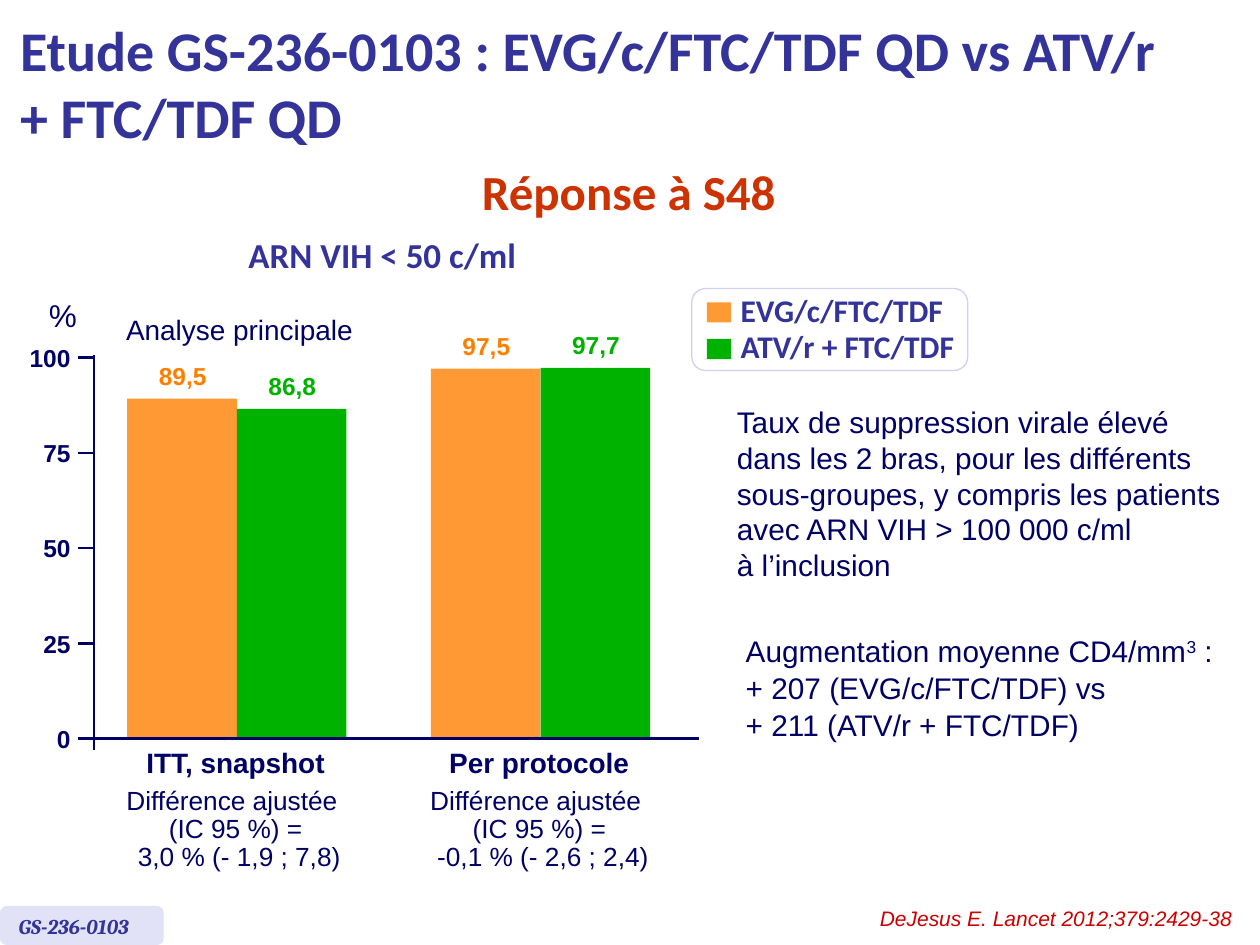
from dataclasses import dataclass

from lxml import etree
from pptx import Presentation
from pptx import util as u
from pptx.dml.color import RGBColor
from pptx.enum import shapes, text
from pptx.oxml.ns import qn

CELL = u.Inches(0.1)  # the slide is a grid of 100 columns by 75 rows
BASE = 58.6           # row of the horizontal axis
TICK_STEP = 0.302     # rows per percent on the axis
BAR_STEP = 0.3        # rows per percent in the bars
BAR_WIDTH = 8.7
LEFT, CENTER, RIGHT = text.PP_ALIGN.LEFT, text.PP_ALIGN.CENTER, text.PP_ALIGN.RIGHT
TOP, MIDDLE = text.MSO_ANCHOR.TOP, text.MSO_ANCHOR.MIDDLE
RECT, ROUND = shapes.MSO_SHAPE.RECTANGLE, shapes.MSO_SHAPE.ROUNDED_RECTANGLE


def style(name: str, size: int, color: str, **more) -> dict:
    return dict(name=name, size=u.Pt(size), color=color, **more)


@dataclass(frozen=True)
class Theme:
    navy: str = "000066"
    indigo: str = "333399"
    orange: str = "FF9933"
    orange_text: str = "FE7F00"
    green: str = "00B200"
    red: str = "CC0000"
    rust: str = "CC3300"
    tag_fill: str = "E2E2F6"
    legend_line: str = "D0D0F0"
    white: str = "FFFFFF"

    def arial(self, size: int, **more) -> dict:
        return style("Arial", size, self.navy, **more)

    def calibri(self, size: int, color: str = indigo) -> dict:
        return style("Calibri", size, color, bold=True)

    def value(self, color: str) -> dict:
        return style("Arial", 14, color, bold=True)


T = Theme()


@dataclass(frozen=True)
class Box:
    left: float
    top: float
    width: float
    height: float

    def emu(self) -> list[int]:
        return [round(v * CELL) for v in (self.left, self.top, self.width, self.height)]


@dataclass(frozen=True)
class Arm:
    name: str
    fill: str
    label: str


@dataclass(frozen=True)
class Analysis:
    name: str
    left: float
    values: tuple[float, float]
    difference: str


ARMS = (Arm("EVG/c/FTC/TDF", T.orange, T.orange_text),
        Arm("ATV/r + FTC/TDF", T.green, T.green))
ANALYSES = (Analysis("ITT, snapshot", 10.1, (89.5, 86.8), " 3,0 % (- 1,9 ; 7,8)"),
            Analysis("Per protocole", 34.2, (97.5, 97.7), " -0,1 % (- 2,6 ; 2,4)"))


def format_font(font, fmt: dict) -> None:
    for key, val in fmt.items():
        if key == "color":
            font.color.rgb = RGBColor.from_string(val)
        else:
            setattr(font, key, val)


def write(tf, lines: list[str], fmt: dict, align=LEFT, spacing=None, before=None) -> None:
    """Fill a frame, one paragraph a line; a vertical tab breaks a line and ^ marks a superscript."""
    for i, line in enumerate(lines):
        p = tf.paragraphs[0] if i == 0 else tf.add_paragraph()
        p.alignment = align
        if spacing:
            p.line_spacing = spacing
        if before and i:
            p.space_before = before
        for j, part in enumerate(line.split("\v")):
            if j:
                p.add_line_break()
            for k, piece in enumerate(part.split("^")):
                r = p.add_run()
                r.text = piece
                format_font(r.font, fmt)
                if k % 2:
                    r.font._element.set("baseline", "30000")


def add_text(s, box: Box, lines: list[str], fmt: dict, align=LEFT, anchor=TOP,
             wrap=False, inset=None, **spacing) -> None:
    tf = s.shapes.add_textbox(*box.emu()).text_frame
    tf.word_wrap = wrap
    tf.vertical_anchor = anchor
    if inset is not None:
        for side in ("left", "top", "right", "bottom"):
            setattr(tf, f"margin_{side}", u.Inches(inset))
    write(tf, lines, fmt, align, **spacing)


def add_block(s, box: Box, fill: str, kind=RECT, line: str | None = None) -> None:
    sp = s.shapes.add_shape(kind, *box.emu())
    sp.shadow.inherit = False
    sp.fill.solid()
    sp.fill.fore_color.rgb = RGBColor.from_string(fill)
    if line:
        sp.line.color.rgb = RGBColor.from_string(line)
        sp.line.width = u.Pt(0.75)
    else:
        sp.line.fill.background()


def add_line(s, x1: float, y1: float, x2: float, y2: float) -> None:
    ends = [round(v * CELL) for v in (x1, y1, x2, y2)]
    line = s.shapes.add_connector(shapes.MSO_CONNECTOR.STRAIGHT, *ends)
    line.line.color.rgb = RGBColor.from_string(T.navy)
    line.line.width = u.Pt(1.5)
    etree.SubElement(line._element.spPr, qn("a:effectLst"))


def add_axes(s) -> None:
    add_line(s, 7.45, 28.2, 7.45, 59.5)
    for tick in range(0, 101, 25):
        y = BASE - tick * TICK_STEP
        add_line(s, 6.2, y, 7.5 if tick else 55.5, y)
        width = 1.1 * len(str(tick))
        add_text(s, Box(5.6 - width, y - 1.2, width, 2.4), [str(tick)],
                 T.value(T.navy), RIGHT, MIDDLE, inset=0)
    add_text(s, Box(2.8, 23, 4.3, 4), ["%"], T.arial(18), RIGHT)


def add_analysis(s, a: Analysis) -> None:
    for i, (arm, value) in enumerate(zip(ARMS, a.values)):
        left, height = a.left + i * BAR_WIDTH, value * BAR_STEP
        top = BASE - 0.1 - height
        add_block(s, Box(left, top, BAR_WIDTH, height), arm.fill)
        add_text(s, Box(left + 1.5, top - 4, 5.8, 4.4), [f"{value:.1f}".replace(".", ",")],
                 T.value(arm.label), CENTER, inset=0.1)
    middle = a.left + BAR_WIDTH - 0.1
    add_text(s, Box(middle - 8.2, 58.7, 16.4, 3.7), [a.name], T.arial(16, bold=True), CENTER)
    add_text(s, Box(middle - 9.75, 62, 19.5, 7.8),
             ["Différence ajustée ", "(IC 95 %) =", a.difference],
             T.arial(15), CENTER, spacing=0.9)


def add_legend(s) -> None:
    add_block(s, Box(54.9, 22.9, 21.9, 6.5), T.white, ROUND, T.legend_line)
    for i, arm in enumerate(ARMS):
        add_block(s, Box(56.1, 24 + 2.9 * i, 1.9, 1.6), arm.fill)
        add_text(s, Box(57.8, 22.6 + 2.9 * i, 19, 4), [arm.name], T.calibri(18))


def main() -> None:
    prs = Presentation()
    prs.slide_width, prs.slide_height = 100 * CELL, 75 * CELL
    s = prs.slides.add_slide(prs.slide_layouts[5])

    title = s.shapes.title
    title.left, title.top, title.width, title.height = Box(0.6, 0.5, 95.5, 12.1).emu()
    title.text_frame.vertical_anchor = MIDDLE
    write(title.text_frame, ["Etude GS-236-0103 : EVG/c/FTC/TDF QD vs ATV/r \v+ FTC/TDF QD"],
          T.calibri(32))
    add_text(s, Box(37.1, 12.3, 25.6, 5.7), ["Réponse à S48"], T.calibri(28, T.rust), CENTER)

    add_text(s, Box(13.1, 18.6, 34.5, 3.8), ["ARN VIH < 50 c/ml"], T.calibri(20),
             CENTER, MIDDLE, wrap=True, spacing=0.8)
    add_text(s, Box(8.9, 24.3, 20.2, 3.7), ["Analyse principale"], T.arial(16), CENTER)
    for a in ANALYSES:
        add_analysis(s, a)
    add_axes(s)
    add_legend(s)

    add_text(s, Box(57.5, 31.5, 40.6, 15.3),
             ["Taux de suppression virale élevé dans les 2 bras, pour les différents "
              "sous-groupes, y compris les patients\vavec ARN VIH > 100 000 c/ml \và l’inclusion"],
             T.arial(17), anchor=MIDDLE, wrap=True)
    add_text(s, Box(58.2, 49.6, 39.9, 9.9),
             ["Augmentation moyenne CD4/mm^3^ :", "+ 207 (EVG/c/FTC/TDF) vs",
              "+ 211 (ATV/r + FTC/TDF)"],
             T.arial(17), anchor=MIDDLE, wrap=True, before=u.Pt(0.85))

    add_block(s, Box(0, 71.9, 13, 3.1), T.tag_fill, ROUND)
    add_text(s, Box(0.5, 72, 12, 3), ["GS-236-0103"],
             style("Cambria", 12, T.indigo, bold=True, italic=True), wrap=True)
    add_text(s, Box(68.8, 71.4, 30, 3), ["DeJesus E. Lancet 2012;379:2429-38"],
             style("Arial", 12, T.red, italic=True), RIGHT, wrap=True)
    prs.save("out.pptx")


if __name__ == "__main__":
    main()
